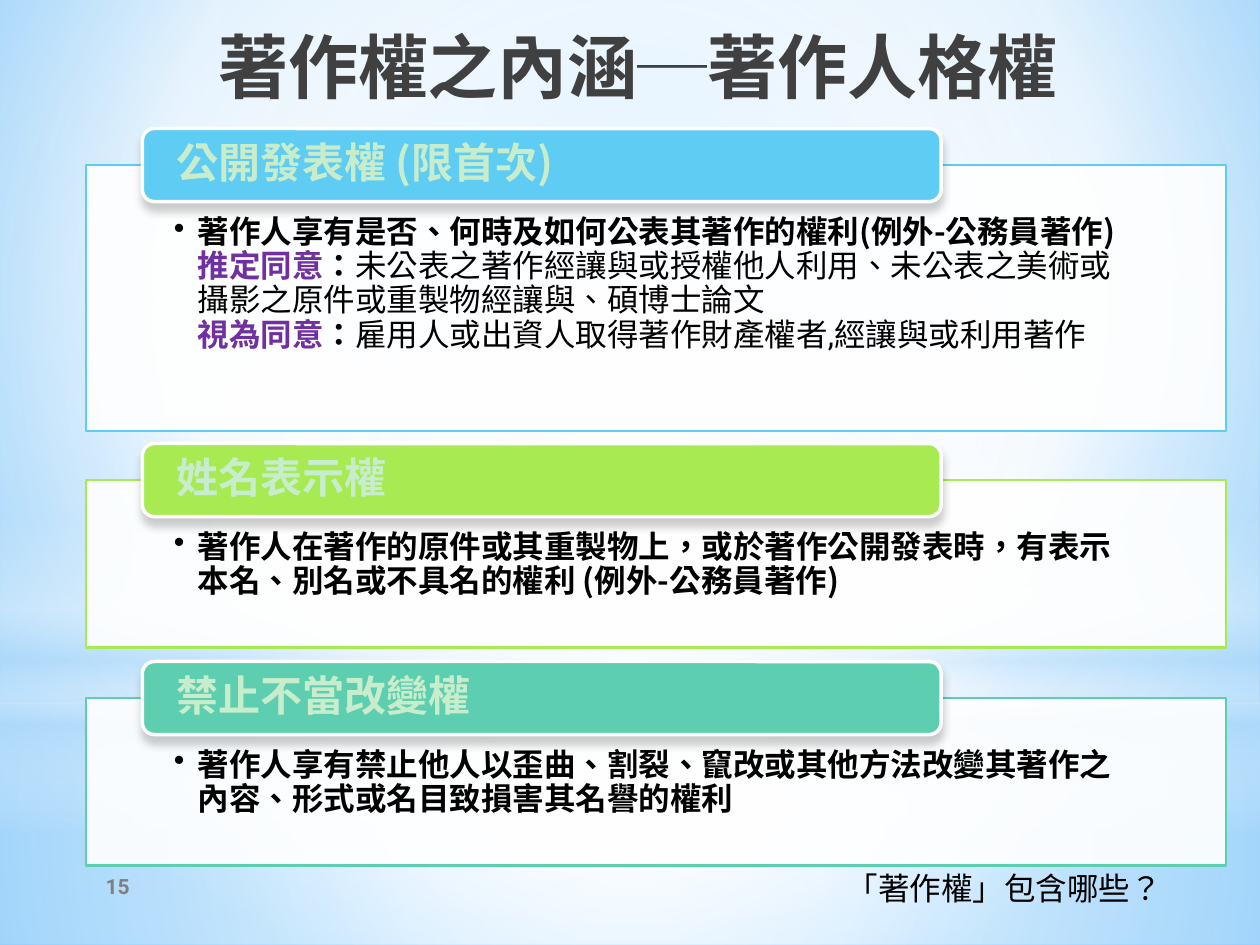
from dataclasses import dataclass

from lxml import etree
from pptx import Presentation
from pptx.dml.color import RGBColor
from pptx.enum.shapes import MSO_SHAPE
from pptx.enum.text import MSO_ANCHOR, PP_ALIGN
from pptx.oxml import parse_xml
from pptx.oxml.ns import nsdecls, qn
from pptx.util import Inches, Pt

RECTANGLE, ROUNDED, OVAL = MSO_SHAPE.RECTANGLE, MSO_SHAPE.ROUNDED_RECTANGLE, MSO_SHAPE.OVAL
TOP, MIDDLE = MSO_ANCHOR.TOP, MSO_ANCHOR.MIDDLE
LEFT, CENTER, RIGHT = PP_ALIGN.LEFT, PP_ALIGN.CENTER, PP_ALIGN.RIGHT


@dataclass(frozen=True)
class Theme:
    """Colours, fonts and type sizes."""
    white: str = "FFFFFF"
    mist: str = "B4DCFA"
    heading: str = "C7EDCC"
    title: str = "404040"
    ink: str = "000000"
    accent: str = "7030A0"
    muted: str = "808080"
    cjk: str = "Noto Sans CJK SC"
    latin: str = "Roboto"
    condensed: str = "Roboto Condensed"
    title_size: float = 40
    heading_size: float = 24
    body_size: float = 18
    number_size: float = 12


THEME = Theme()


@dataclass(frozen=True)
class Span:
    """A stretch of text with one look."""
    text: str
    color: str = THEME.ink
    bold: bool = True
    size: float = THEME.body_size
    font: str = THEME.cjk
    break_after: bool = False


@dataclass(frozen=True)
class Right:
    """One moral right: a heading tab over a framed explanation."""
    heading: str
    color: str
    top: float
    height: float
    spans: tuple[Span, ...]


@dataclass(frozen=True)
class Glow:
    """A background shape with a soft gradient of (position, colour, alpha) stops."""
    kind: int
    top: float
    height: float
    stops: tuple[tuple[int, str, int], ...]
    linear: bool = False


GLOWS = (
    Glow(RECTANGLE, 5.58, 1.92, ((0, THEME.white, 91), (37, THEME.white, 76), (100, THEME.mist, 79))),
    Glow(RECTANGLE, 0, 5.58, ((0, THEME.white, 89), (48, THEME.white, 62), (100, THEME.mist, 79))),
    Glow(RECTANGLE, 4.12, 2.5, ((0, THEME.white, 0), (29, THEME.white, 30), (45, THEME.mist, 40),
                                (55, THEME.white, 26), (65, THEME.mist, 60), (100, THEME.white, 0)), True),
    Glow(OVAL, 1.75, 5.58, ((0, THEME.white, 100), (56, THEME.white, 0))),
)

RIGHTS = (
    Right("公開發表權 (限首次)", "5ECCF3", 1.31, 2.11, (
        Span("著作人享有是否、何時及如何公表其著作的權利(例外-公務員著作)"),
        Span("推定同意", THEME.accent),
        Span("："),
        Span("未公表之著作經讓與或授權他人利用、未公表之美術或攝影之原件或重製物經讓與、碩博士論文",
             bold=False, break_after=True),
        Span("視為同意", THEME.accent),
        Span("："),
        Span("雇用人或出資人取得著作財產權者,經讓與或利用著作", bold=False, font=THEME.condensed))),
    Right("姓名表示權", "A7EA52", 3.81, 1.33, (
        Span("著作人在著作的原件或其重製物上，或於著作公開發表時，有表示本名、別名或不具名的權利 (例外-公務員著作)"),)),
    Right("禁止不當改變權", "5DCEAF", 5.54, 1.33, (
        Span("著作人享有禁止他人以歪曲、割裂、竄改或其他方法改變其著作之內容、形式或名目致損害其名譽的權利"),)),
)


def gradient(stops, focus=(50, 50, 50, 50), linear: bool = False):
    """Return a gradFill element."""
    marks = "".join(
        f'<a:gs pos="{position * 1000}"><a:srgbClr val="{color}"><a:alpha val="{alpha * 1000}"/></a:srgbClr></a:gs>'
        for position, color, alpha in stops)
    sides = " ".join(f'{side}="{value * 1000}"' for side, value in zip("ltrb", focus))
    course = ('<a:lin ang="5400000" scaled="0"/>' if linear
              else f'<a:path path="circle"><a:fillToRect {sides}/></a:path>')
    return parse_xml(f'<a:gradFill {nsdecls("a")} rotWithShape="1"><a:gsLst>{marks}</a:gsLst>{course}</a:gradFill>')


def paint_background(page) -> None:
    """Lay the radial backdrop and its glows."""
    fill = page.background.fill
    fill.gradient()
    plain = page.element.find(".//" + qn("a:gradFill"))
    stops = ((0, "9ED5FF", 100), (60, THEME.white, 100), (100, "5BB9FF", 100))
    plain.getparent().replace(plain, gradient(stops, (20, 10, 20, 60)))
    for glow in GLOWS:
        shape = page.shapes.add_shape(glow.kind, 0, Inches(glow.top), Inches(10), Inches(glow.height))
        shape.shadow.inherit = False
        shape.line.fill.background()
        shape.fill.gradient()
        plain = shape.element.spPr.find(qn("a:gradFill"))
        plain.getparent().replace(plain, gradient(glow.stops, linear=glow.linear))


def add_panel(page, kind: int, place, fill: str, line: str, width: float):
    """Draw a filled and outlined shape without a shadow."""
    shape = page.shapes.add_shape(kind, *map(Inches, place))
    shape.shadow.inherit = False
    shape.fill.solid()
    shape.fill.fore_color.rgb = RGBColor.from_string(fill)
    shape.line.color.rgb = RGBColor.from_string(line)
    shape.line.width = Pt(width)
    return shape


def add_text(page, place, spans, margins=(0.1, 0.05, 0.1, 0.05), anchor=TOP, align=LEFT, spacing: float = 1.0):
    """Place a text box of one paragraph and return the paragraph."""
    box = page.shapes.add_textbox(*map(Inches, place))
    frame = box.text_frame
    frame.word_wrap = True
    frame.vertical_anchor = anchor
    frame.margin_left, frame.margin_top, frame.margin_right, frame.margin_bottom = map(Inches, margins)
    para = frame.paragraphs[0]
    para.alignment = align
    para.line_spacing = spacing
    for span in spans:
        run = para.add_run()
        run.text = span.text
        run.font.size = Pt(span.size)
        run.font.bold = span.bold
        run.font.name = span.font
        run.font.color.rgb = RGBColor.from_string(span.color)
        properties = run.font._element
        properties.set("lang", "zh-TW")
        if span.break_after:
            para.add_line_break()
    return para


def add_bullet(para) -> None:
    """Give the paragraph a hanging round bullet."""
    properties = para._p.get_or_add_pPr()
    properties.set("marL", str(Inches(0.19)))
    properties.set("indent", str(-Inches(0.19)))
    etree.SubElement(properties, qn("a:buChar")).set("char", "•")


def add_right(page, right: Right) -> None:
    """Draw the frame, explanation and heading tab of a right."""
    place = (0.68, right.top, 9.05, right.height)
    frame = add_panel(page, RECTANGLE, place, THEME.white, right.color, 1.25)
    tint = frame.element.spPr.find(qn("a:solidFill"))[0]
    etree.SubElement(tint, qn("a:alpha")).set("val", "90000")
    add_bullet(add_text(page, place, right.spans, (0.7, 0.41, 0.7, 0.14), spacing=0.9))
    tab = add_panel(page, ROUNDED, (1.13, right.top - 0.29, 6.34, 0.58), right.color, THEME.white, 2)
    effects = tab.element.spPr.find(qn("a:effectLst"))
    effects.append(parse_xml(
        f'<a:outerShdw {nsdecls("a")} blurRad="{Pt(5)}" dist="{Pt(4)}" dir="5400000" rotWithShape="0">'
        f'<a:srgbClr val="{THEME.ink}"><a:alpha val="20000"/></a:srgbClr></a:outerShdw>'))
    heading = Span(right.heading, THEME.heading, size=THEME.heading_size)
    add_text(page, (1.16, right.top - 0.26, 6.28, 0.52), (heading,), (0.24, 0, 0.24, 0), MIDDLE, spacing=0.9)


def main() -> None:
    """Build the deck."""
    deck = Presentation()
    deck.slide_width, deck.slide_height = Inches(10), Inches(7.5)
    page = deck.slides.add_slide(deck.slide_layouts[6])
    paint_background(page)
    for right in RIGHTS:
        add_right(page, right)
    number = Span("15", THEME.muted, size=THEME.number_size, font=THEME.latin)
    add_text(page, (0.6, 6.83, 0.67, 0.4), (number,), anchor=MIDDLE, align=CENTER)
    question = Span("「著作權」包含哪些？", bold=False, font=THEME.latin)
    add_text(page, (6.62, 6.85, 3.38, 0.4), (question,))
    title = Span("著作權之內涵─著作人格權", THEME.title, size=THEME.title_size)
    add_text(page, (0.75, 0.21, 7.74, 0.89), (title,), align=RIGHT, spacing=0.9)
    deck.save("out.pptx")


if __name__ == "__main__":
    main()
